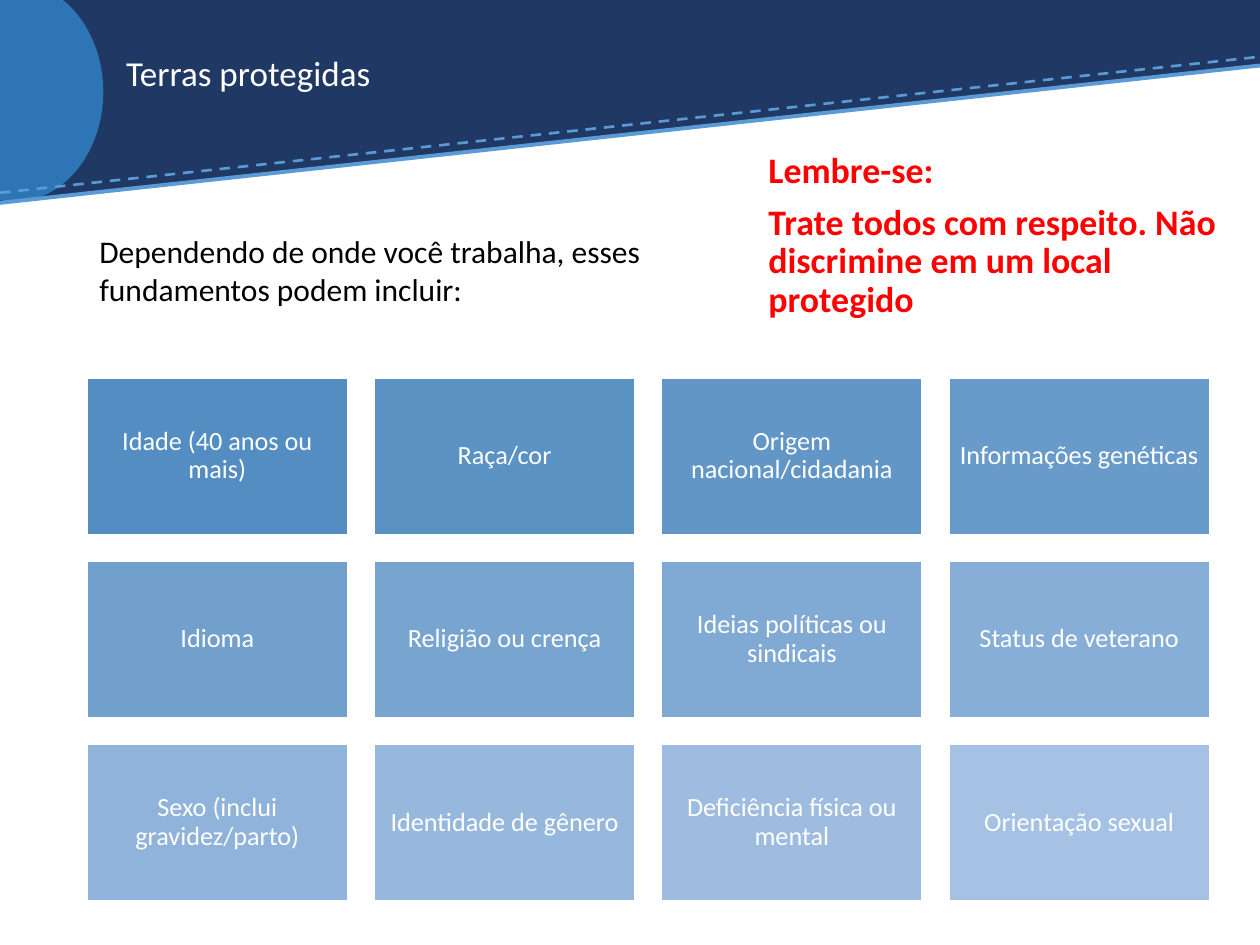
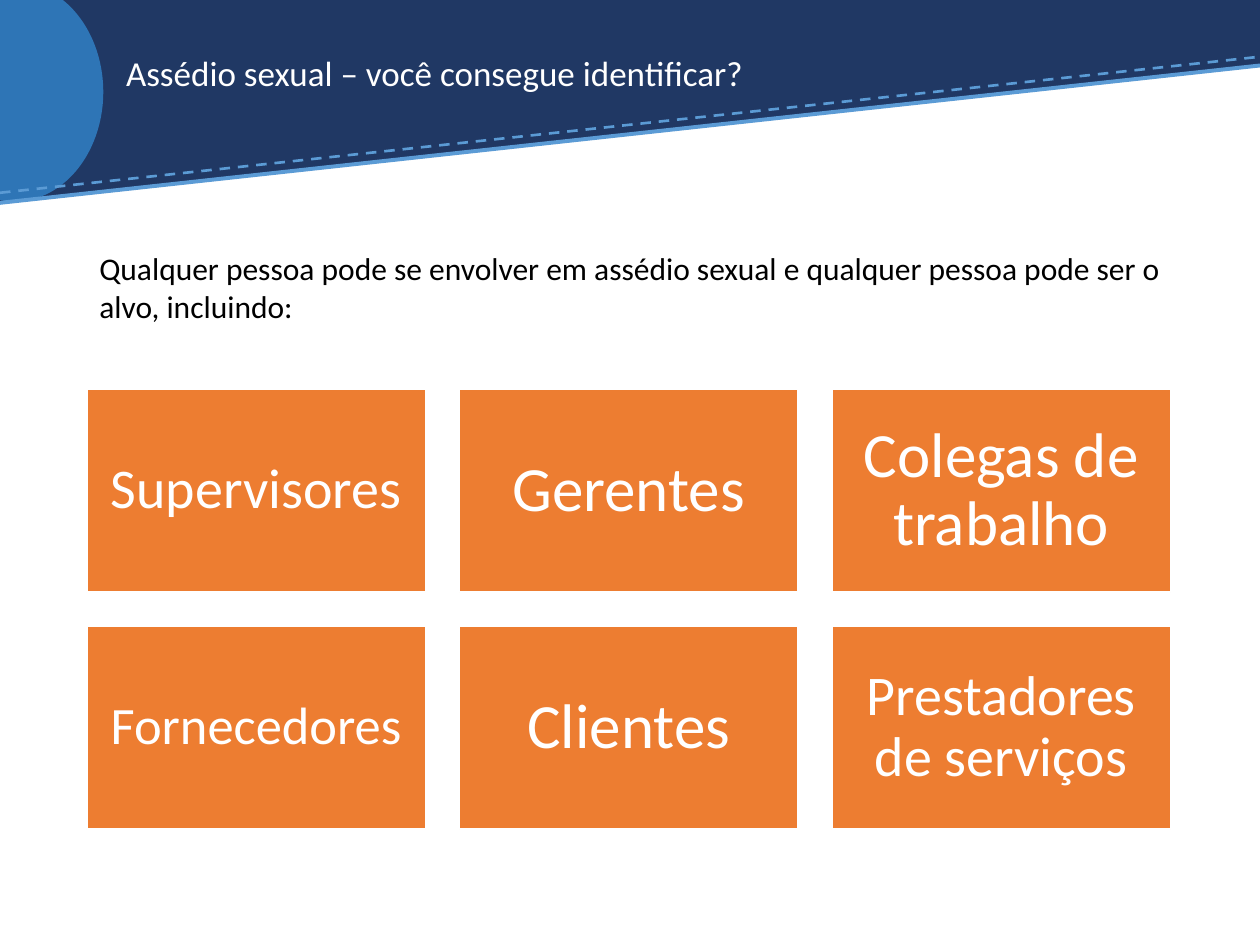
"""Build two training slides about protected grounds and sexual harassment."""
from lxml.etree import SubElement
from pptx import Presentation
from pptx.dml.color import RGBColor
from pptx.enum.dml import MSO_LINE_DASH_STYLE as Dash
from pptx.enum.shapes import MSO_CONNECTOR as Connector, MSO_SHAPE as Shape
from pptx.enum.text import MSO_ANCHOR as Anchor, MSO_AUTO_SIZE as AutoSize, PP_ALIGN as Align
from pptx.oxml.ns import qn
from pptx.util import Inches, Pt

FONT = "Calibri"
WIDTH, HEIGHT = 10, 7.5
NAVY, BLUE, SKY, ORANGE = "203864", "2E75B6", "5B9BD5", "ED7D31"
RAMP = "538DC1", "A5C1E3"
WHITE, BLACK, RED = "FFFFFF", "000000", "FF0000"
TITLE_BOX = 0.9, 0.2, 8.07, 0.8
BAND = [(0, 0), (WIDTH, 0), (WIDTH, 0.52), (0, 1.6)]

SLIDES = [
    dict(
        title="Terras protegidas",
        texts=[
            (["Lembre-se:", "Trate todos com respeito. Não discrimine em um local protegido"],
             (6, 1.16, 3.78, 1.7), dict(size=20.5, color=RED, bold=True, spacing=0.9)),
            (["Dependendo de onde você trabalha, esses fundamentos podem incluir:"],
             (0.69, 1.79, 4.61, 1), dict(size=18, color=BLACK)),
        ],
        area=(0.69, 3, 8.91, 4.15), gap=0.21, columns=4, fills=RAMP,
        tiles=[(text, 15) for text in (
            "Idade (40 anos ou mais)", "Raça/cor", "Origem nacional/cidadania",
            "Informações genéticas", "Idioma", "Religião ou crença",
            "Ideias políticas ou sindicais", "Status de veterano",
            "Sexo (inclui gravidez/parto)", "Identidade de gênero",
            "Deficiência física ou mental", "Orientação sexual")],
    ),
    dict(
        title="Assédio sexual – você consegue identificar?",
        texts=[
            (["Qualquer pessoa pode se envolver em assédio sexual e qualquer pessoa "
              "pode ser o alvo, incluindo:"],
             (0.69, 1.93, 9.06, 0.7), dict(size=18, color=BLACK)),
        ],
        area=(0.69, 3.09, 8.6, 3.49), gap=0.27, columns=3, fills=(ORANGE, ORANGE),
        tiles=[("Supervisores", 32), ("Gerentes", 36), ("Colegas de trabalho", 36),
               ("Fornecedores", 30), ("Clientes", 36), ("Prestadores de serviços", 32)],
    ),
]


def rgb(color):
    return RGBColor.from_string(color)


def inches(box):
    return [Inches(value) for value in box]


def blend(start, end, share):
    pairs = zip(bytes.fromhex(start), bytes.fromhex(end))
    return "".join(f"{round(a + (b - a) * share):02X}" for a, b in pairs)


def paint(sp, fill, line=None):
    sp.shadow.inherit = False
    sp.fill.solid()
    sp.fill.fore_color.rgb = rgb(fill)
    if line:
        sp.line.color.rgb = rgb(line)
        sp.line.width = Pt(1)
    else:
        sp.line.fill.background()


def write(sp, paragraphs, size, color, bold=False, align=Align.LEFT,
          anchor=Anchor.TOP, spacing=1.0):
    tf = sp.text_frame
    tf.text = "\n".join(paragraphs)
    tf.word_wrap = True
    tf.auto_size = AutoSize.NONE
    tf.vertical_anchor = anchor
    for i, p in enumerate(tf.paragraphs):
        p.alignment = align
        p.line_spacing = spacing
        p.space_before = Pt(7.5 if i else 0)
        for r in p.runs:
            r.font.name, r.font.size, r.font.bold = FONT, Pt(size), bold
            r.font.color.rgb = rgb(color)


def add_rule(s, start, end, width, dash=None):
    line = s.shapes.add_connector(Connector.STRAIGHT, *inches((0, start, WIDTH, end)))
    line.line.color.rgb = rgb(SKY)
    line.line.width = Pt(width)
    if dash:
        line.line.dash_style = dash
    SubElement(line.element.spPr, qn("a:effectLst"))
    return line


def add_header(s, layout):
    """Draw the header on a slide and move it to the layout that all slides share."""
    for sp in list(layout.placeholders)[1:]:
        layout.shapes.element.remove(sp.element)
    corners = [inches(corner) for corner in BAND]
    outline = s.shapes.build_freeform(*corners[0])
    outline.add_line_segments(corners[1:])
    band = outline.convert_to_shape()
    paint(band, NAVY)
    disc = s.shapes.add_shape(Shape.OVAL, *inches((-0.59, -0.14, 1.41, 1.74)))
    paint(disc, BLUE)
    rules = add_rule(s, 1.53, 0.45, 1.5, Dash.DASH), add_rule(s, 1.61, 0.52, 2.25)
    for sp in (band, disc, *rules):
        layout.shapes.element.append(sp.element)


def add_tiles(s, tiles, area, gap, columns, fills):
    left, top, width, height = area
    rows = len(tiles) // columns
    w = (width - gap * (columns - 1)) / columns
    h = (height - gap * (rows - 1)) / rows
    for i, (text, size) in enumerate(tiles):
        row, column = divmod(i, columns)
        box = left + column * (w + gap), top + row * (h + gap), w, h
        sp = s.shapes.add_shape(Shape.RECTANGLE, *inches(box))
        paint(sp, blend(*fills, i / (len(tiles) - 1)), WHITE)
        write(sp, [text], size, WHITE, align=Align.CENTER, anchor=Anchor.MIDDLE, spacing=0.9)
        tf = sp.text_frame
        tf.margin_left = tf.margin_right = tf.margin_top = tf.margin_bottom = Pt(size * 0.3)


def main():
    prs = Presentation()
    prs.slide_width, prs.slide_height = Inches(WIDTH), Inches(HEIGHT)
    layout = prs.slide_layouts.get_by_name("Title Only")
    for number, content in enumerate(SLIDES):
        s = prs.slides.add_slide(layout)
        if number == 0:
            add_header(s, layout)
        title = s.shapes.title
        title.left, title.top, title.width, title.height = inches(TITLE_BOX)
        write(title, [content["title"]], 20, WHITE, anchor=Anchor.MIDDLE, spacing=0.9)
        for paragraphs, box, style in content["texts"]:
            write(s.shapes.add_textbox(*inches(box)), paragraphs, **style)
        add_tiles(s, *(content[key] for key in ("tiles", "area", "gap", "columns", "fills")))
    prs.save("out.pptx")


if __name__ == "__main__":
    main()
